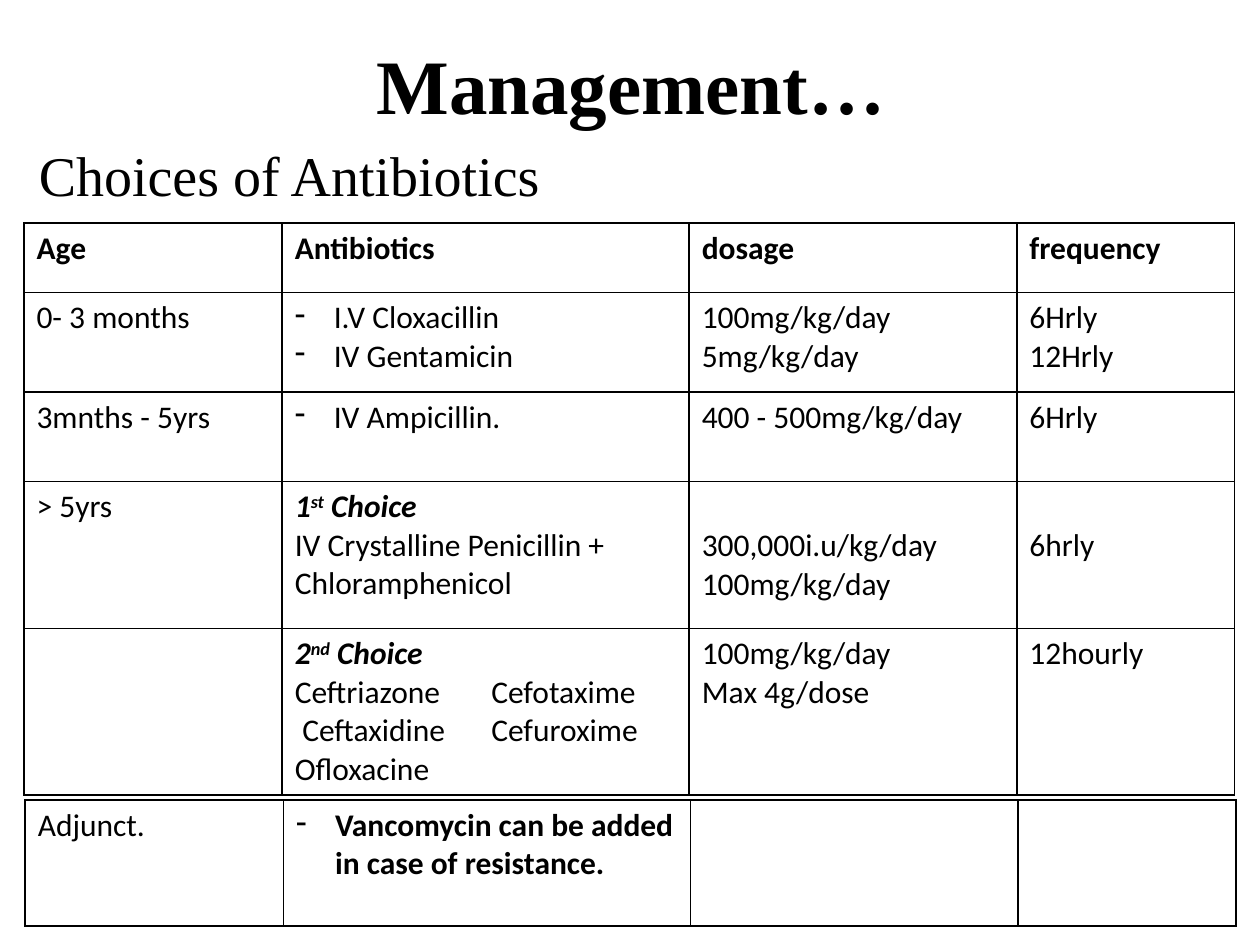
from typing import NamedTuple

from lxml.etree import SubElement
from pptx import Presentation
from pptx.dml.color import RGBColor
from pptx.enum.text import MSO_ANCHOR as Anchor, PP_ALIGN as Align
from pptx.oxml.ns import qn
from pptx.util import Inches, Pt

BLACK = RGBColor(0, 0, 0)
HEADING_FONT = "Times New Roman"
TABLE_FONT = "Calibri"
COLUMN_WIDTHS = (2.05, 3.23, 2.6, 1.73)
LINE_HEIGHT = 0.31
CELL_MARGIN = 0.05


class Line(NamedTuple):
    """One paragraph of a cell; sup is raised text between text and tail."""
    text: str
    sup: str = ""
    tail: str = ""
    bold: bool = False
    italic: bool = False
    hanging: float = 0
    bullet: str = ""
    tab: float = 0


class Cell(NamedTuple):
    lines: tuple = ()
    skipped_lines: int = 0


def plain(*texts, skipped_lines=0):
    return Cell(tuple(Line(text) for text in texts), skipped_lines)


def bold(text):
    return Cell((Line(text, bold=True),))


def dashed(*texts, bold=False):
    return Cell(tuple(Line(text, bold=bold, hanging=0.31, bullet="-") for text in texts))


def choice(number, ordinal):
    return Line(number, ordinal, " Choice", bold=True, italic=True)


class SlideBuilder:
    def __init__(self, slide):
        self.slide = slide

    def style(self, paragraph, font, size, bold=False, italic=False):
        paragraph.font.name = font
        paragraph.font.size = Pt(size)
        paragraph.font.bold = bold
        paragraph.font.italic = italic
        paragraph.font.color.rgb = BLACK

    def heading(self, text, left, top, width, height, size, bold=False,
                align=Align.LEFT, anchor=Anchor.TOP):
        box = self.slide.shapes.add_textbox(
            Inches(left), Inches(top), Inches(width), Inches(height))
        frame = box.text_frame
        frame.word_wrap = True
        frame.vertical_anchor = anchor
        paragraph = frame.paragraphs[0]
        paragraph.text = text
        paragraph.alignment = align
        self.style(paragraph, HEADING_FONT, size, bold)

    def table(self, left, top, row_heights, rows):
        table = self.slide.shapes.add_table(
            len(rows), len(COLUMN_WIDTHS), Inches(left), Inches(top),
            Inches(sum(COLUMN_WIDTHS)), Inches(sum(row_heights))).table
        table.first_row = table.horz_banding = False
        for column, width in zip(table.columns, COLUMN_WIDTHS):
            column.width = Inches(width)
        for table_row, height, contents in zip(table.rows, row_heights, rows):
            table_row.height = Inches(height)
            for cell, content in zip(table_row.cells, contents):
                self.cell(cell, content)

    def cell(self, cell, content):
        self.borders(cell)
        cell.fill.background()
        cell.margin_top = Inches(CELL_MARGIN + content.skipped_lines * LINE_HEIGHT)
        frame = cell.text_frame
        for index, line in enumerate(content.lines):
            paragraph = frame.add_paragraph() if index else frame.paragraphs[0]
            self.line(paragraph, line)

    def line(self, paragraph, line):
        paragraph.text = line.text
        if line.sup:
            raised = paragraph.add_run()
            raised.text = line.sup
            raised.font._element.set("baseline", "30000")
            paragraph.add_run().text = line.tail
        self.style(paragraph, TABLE_FONT, 18, line.bold, line.italic)
        properties = paragraph._p.get_or_add_pPr()
        if line.hanging:
            properties.set("marL", str(Inches(line.hanging)))
            properties.set("indent", str(-Inches(line.hanging)))
        details = []
        if line.bullet:
            bullet = SubElement(properties, qn("a:buChar"))
            bullet.set("char", line.bullet)
            details.append(bullet)
        if line.tab:
            tabs = SubElement(properties, qn("a:tabLst"))
            SubElement(tabs, qn("a:tab"), pos=str(Inches(line.tab)), algn="l")
            details.append(tabs)
        for position, detail in enumerate(details):
            properties.insert(position, detail)

    def borders(self, cell):
        properties = cell._tc.get_or_add_tcPr()
        for side in ("lnL", "lnR", "lnT", "lnB"):
            border = SubElement(properties, qn(f"a:{side}"), w=str(Pt(1)))
            fill = SubElement(border, qn("a:solidFill"))
            SubElement(fill, qn("a:srgbClr"), val=str(BLACK))


ANTIBIOTICS = (
    (bold("Age"), bold("Antibiotics"), bold("dosage"), bold("frequency")),
    (plain("0- 3 months"), dashed("I.V Cloxacillin", "IV Gentamicin"),
     plain("100mg/kg/day", "5mg/kg/day"), plain("6Hrly", "12Hrly")),
    (plain("3mnths - 5yrs"), dashed("IV Ampicillin."),
     plain("400 - 500mg/kg/day"), plain("6Hrly")),
    (plain("> 5yrs"),
     Cell((choice("1", "st"), Line("IV Crystalline Penicillin +"),
           Line("Chloramphenicol"))),
     plain("300,000i.u/kg/day", "100mg/kg/day", skipped_lines=1),
     plain("6hrly", skipped_lines=1)),
    (Cell(),
     Cell((choice("2", "nd"),
           Line("Ceftriazone\tCefotaxime\vCeftaxidine\tCefuroxime",
                hanging=0.06, tab=1.55),
           Line("Ofloxacine"))),
     plain("100mg/kg/day", "Max 4g/dose"), plain("12hourly")),
)
ADJUNCT = (
    (plain("Adjunct."),
     dashed("Vancomycin can be added in case of resistance.", bold=True),
     Cell(), Cell()),
)


def main():
    presentation = Presentation()
    presentation.slide_width = Inches(10)
    presentation.slide_height = Inches(7.5)
    builder = SlideBuilder(presentation.slides.add_slide(presentation.slide_layouts[6]))
    builder.heading("Management…", 0.51, 0.04, 9, 1.25, 44, bold=True,
                    align=Align.CENTER, anchor=Anchor.MIDDLE)
    builder.table(0.19, 1.77, (0.55, 0.79, 0.71, 1.17, 1.32), ANTIBIOTICS)
    builder.heading("Choices of Antibiotics", 0.21, 1.07, 5.59, 0.64, 32)
    builder.table(0.2, 6.35, (1,), ADJUNCT)
    presentation.save("out.pptx")


if __name__ == "__main__":
    main()
